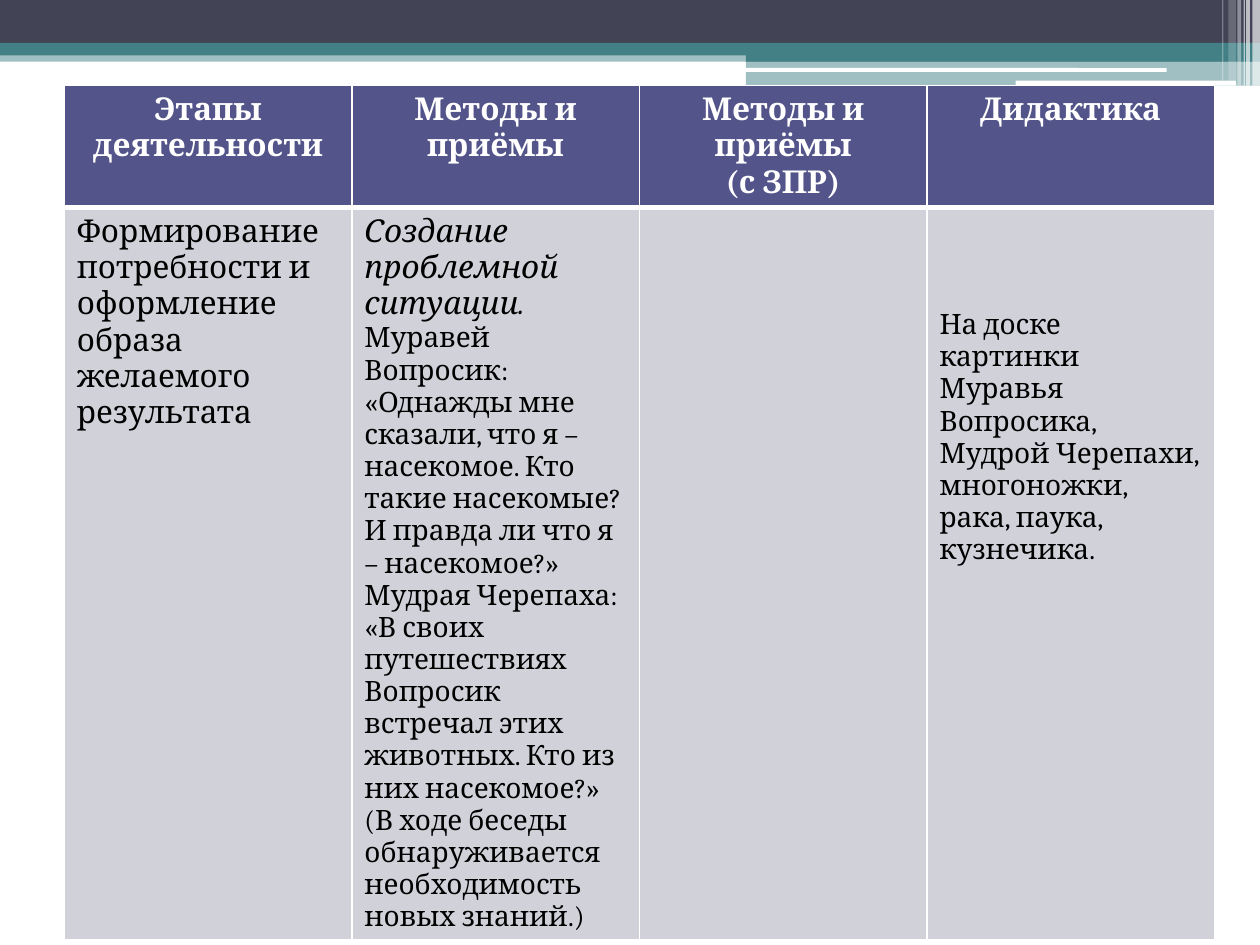
from typing import NamedTuple

from lxml import etree
from pptx import Presentation
from pptx import util as u
from pptx.dml.color import RGBColor
from pptx.enum import shapes, text
from pptx.oxml import ns

COLORS = {
    "slate": "424456", "teal": "438086", "white": "FFFFFF",
    "header": "53548A", "body": "D1D1DA", "ink": "000000",
}
FONT = "Cambria"
CELL = u.Inches(0.01)  # the slide is a grid of 1000 columns by 750 rows


class Bar(NamedTuple):
    col: int
    row: int
    cols: int
    rows: int
    color: str
    opacity: int = 100
    rounded: bool = False


class Line(NamedTuple):
    words: str
    size: int = 16
    italic: bool = False


class Column(NamedTuple):
    heading: list[str]
    body: list[Line]
    top_gap: float = 0.05


BARS = [
    # Bands across the top
    Bar(0, 40, 1000, 9, "teal", 50),
    Bar(0, 0, 1000, 34, "slate"),
    Bar(0, 34, 1000, 10, "teal"),
    Bar(592, 39, 408, 10, "teal"),
    Bar(592, 48, 408, 20, "teal", 50),
    # White rules on the right
    Bar(591, 54, 335, 3, "white", rounded=True),
    Bar(806, 64, 175, 4, "white", rounded=True),
    # Translucent stripes at the right edge
    Bar(994, 0, 6, 68, "white", 65),
    Bar(989, 0, 3, 68, "white", 65),
    Bar(987, 0, 1, 68, "white", 60),
    Bar(982, 0, 3, 68, "white", 40),
    Bar(975, 0, 6, 64, "white", 20),
    Bar(970, 0, 1, 64, "white", 30),
]

COLUMNS = [
    Column(["Этапы деятельности"], [
        Line("Формирование потребности и оформление образа желаемого результата", 18),
    ]),
    Column(["Методы и приёмы"], [
        Line("Создание проблемной ситуации.", 18, True),
        Line("Муравей Вопросик: «Однажды мне сказали, что я – насекомое. "
             "Кто такие насекомые? И правда ли что я – насекомое?»"),
        Line("Мудрая Черепаха: «В своих путешествиях Вопросик встречал этих "
             "животных. Кто из них насекомое?»"),
        Line("(В ходе беседы обнаруживается необходимость новых знаний.)"),
    ]),
    Column(["Методы и приёмы", "(с ЗПР)"], []),
    Column(["Дидактика"], [
        Line("На доске картинки Муравья Вопросика, Мудрой Черепахи, "
             "многоножки, рака, паука, кузнечика."),
    ], top_gap=0.81),
]


def rgb(name: str) -> RGBColor:
    return RGBColor.from_string(COLORS[name])


def draw_bar(slide, bar: Bar) -> None:
    kind = shapes.MSO_SHAPE.ROUNDED_RECTANGLE if bar.rounded else shapes.MSO_SHAPE.RECTANGLE
    shape = slide.shapes.add_shape(kind, *(n * CELL for n in bar[:4]))
    shape.shadow.inherit = False
    shape.line.fill.background()
    shape.fill.solid()
    shape.fill.fore_color.rgb = rgb(bar.color)
    if bar.opacity < 100:
        color = shape.fill._xPr.find(".//" + ns.qn("a:srgbClr"))
        etree.SubElement(color, ns.qn("a:alpha"), val=str(bar.opacity * 1000))


def style_cell(cell, fill: str, top: int, bottom: int) -> None:
    """White borders, widths in points, and a plain fill."""
    properties = cell._tc.get_or_add_tcPr()
    for side, width in {"L": 1, "R": 1, "T": top, "B": bottom}.items():
        border = etree.SubElement(properties, ns.qn(f"a:ln{side}"), w=str(u.Pt(width)))
        solid = etree.SubElement(border, ns.qn("a:solidFill"))
        etree.SubElement(solid, ns.qn("a:srgbClr"), val=COLORS["white"])
    cell.fill.solid()
    cell.fill.fore_color.rgb = rgb(fill)


def write_cell(cell, lines: list[Line], color: str, heading: bool = False) -> None:
    for index, line in enumerate(lines):
        frame = cell.text_frame
        paragraph = frame.add_paragraph() if index else frame.paragraphs[0]
        paragraph.text = line.words
        paragraph.alignment = text.PP_ALIGN.CENTER if heading else text.PP_ALIGN.LEFT
        font = paragraph.font
        font.name, font.size = FONT, u.Pt(line.size)
        font.bold, font.italic = heading, line.italic
        font.color.rgb = rgb(color)


def draw_table(slide, columns: list[Column]) -> None:
    table = slide.shapes.add_table(
        2, len(columns), 51 * CELL, 68 * CELL, 913 * CELL, 461 * CELL).table
    table.rows[0].height, table.rows[1].height = 77 * CELL, 384 * CELL
    for index, column in enumerate(columns):
        head, body = table.cell(0, index), table.cell(1, index)
        style_cell(head, "header", top=1, bottom=3)
        style_cell(body, "body", top=3, bottom=1)
        body.margin_top = u.Inches(column.top_gap)
        write_cell(head, [Line(words, 18) for words in column.heading], "white", heading=True)
        write_cell(body, column.body, "ink")


def main() -> None:
    deck = Presentation()
    deck.slide_width, deck.slide_height = 1000 * CELL, 750 * CELL
    slide = deck.slides.add_slide(deck.slide_layouts[6])
    for bar in BARS:
        draw_bar(slide, bar)
    draw_table(slide, COLUMNS)
    deck.save("out.pptx")


if __name__ == "__main__":
    main()
